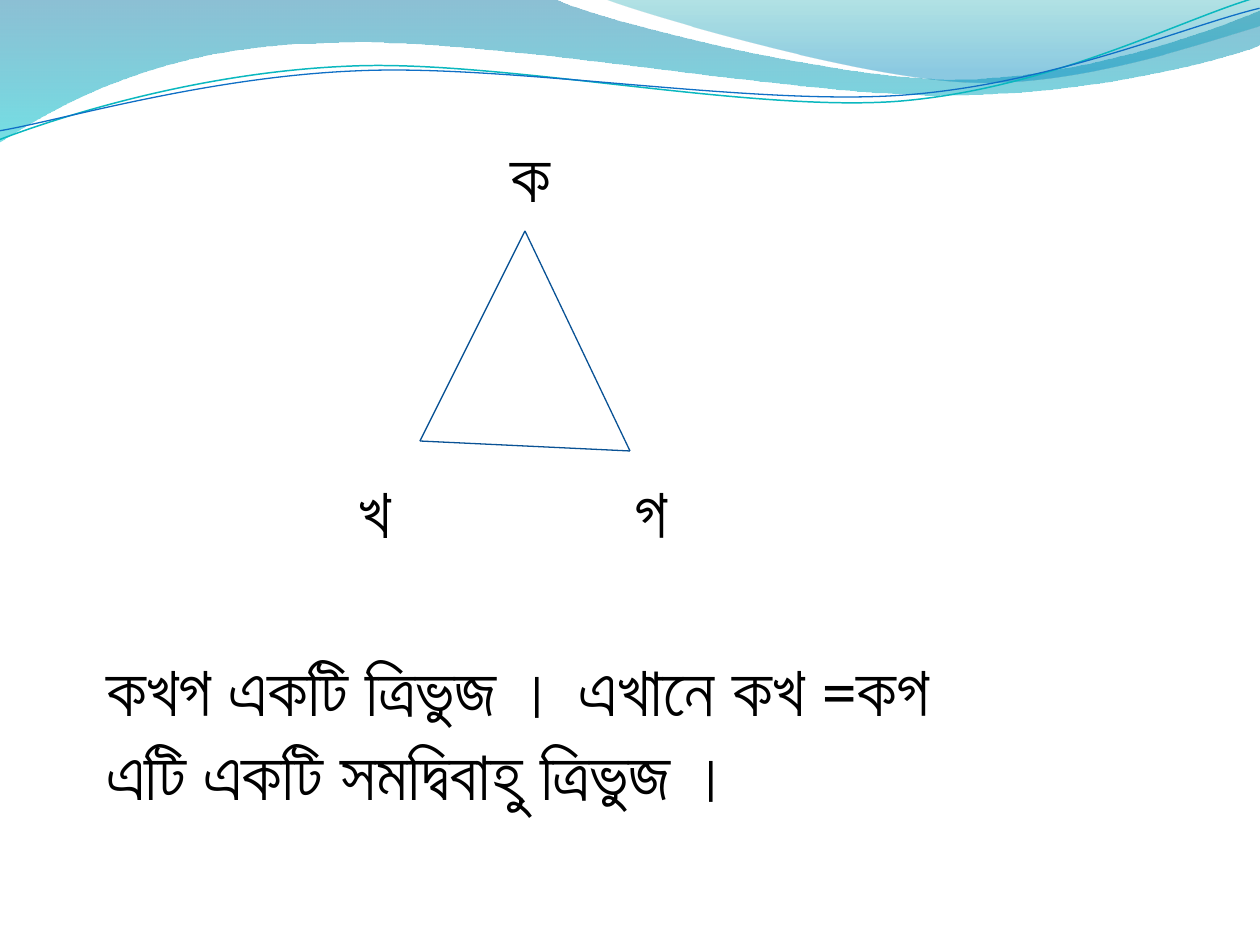
"""Build a slide showing an isosceles triangle below a waved header."""
import lxml.etree
import pptx
import pptx.dml.color
import pptx.enum.shapes
import pptx.enum.text
import pptx.oxml.ns
import pptx.util

PX = 914400 / 126
rgb = pptx.dml.color.RGBColor.from_string
qn = pptx.oxml.ns.qn
align = pptx.enum.text.PP_ALIGN

theme = {
    "band": [("0074A1", 45, 0), ("00C6CF", 55, 1)],
    "crest": [("00A1A9", 30, 0), ("008BBF", 45, 0.8)],
    "teal": ("0AB8BF", 0.85),
    "blue": ("0F6FC6", 0.75),
    "edge": ("095295", 0.75),
    "text": {"name": "Calibri", "size": pptx.util.Pt(40)},
    "ink": "000000",
}


def emu(*nums):
    return [round(num * PX) for num in nums]


def trace(shapes, start, parts, close):
    pen = shapes.build_freeform(*emu(*start))
    for part in parts:
        spots = [emu(*part[i:i + 2]) for i in range(0, len(part), 2)]
        pen.add_line_segments(spots, close=close and part is parts[-1])
    shape = pen.convert_to_shape()
    shape.shadow.inherit = False
    legs = iter(list(shape._element.iter(qn("a:lnTo"))))
    for part in parts:
        group = [next(legs) for _ in range(len(part) // 2)]
        if len(group) == 3:
            curve = lxml.etree.Element(qn("a:cubicBezTo"))
            group[0].addprevious(curve)
            for leg in group:
                curve.append(leg[0])
                leg.getparent().remove(leg)
    return shape


deck = pptx.Presentation()
deck.slide_width, deck.slide_height = emu(1260, 945)
slide = deck.slides.add_slide(deck.slide_layouts[6])
shapes = slide.shapes

bands = [
    ("band", (0, 0), [
        (554, -1), (600, 21, 837, 79, 955, 79), (1075, 79, 1207, 33, 1260, 11),
        (1261, 45), (1239, 55, 1096, 96, 940, 95), (784, 95, 481, 35, 324, 43),
        (163, 45, 58, 105, -1, 142), (0, 0)]),
    ("crest", (604, -1), [
        (641, 14, 859, 78, 969, 82), (1079, 87, 1211, 40, 1260, 26),
        (1260, 0), (604, -1)]),
]
for tone, start, parts in bands:
    band = trace(shapes, start, parts, True)
    band.line.fill.background()
    band.fill.gradient()
    band.fill.gradient_angle = 270
    for stop, (hue, alpha, place) in zip(band.fill.gradient_stops, theme[tone]):
        stop.color.rgb = rgb(hue)
        stop.position = place
    for node, (hue, alpha, place) in zip(band._element.iter(qn("a:srgbClr")), theme[tone]):
        lxml.etree.SubElement(node, qn("a:alpha"), val=str(alpha * 1000))

waves = [
    ("teal", (-3, 110), [
        (58, 90, 199, 52, 350, 53), (499, 53, 745, 118, 896, 114),
        (1049, 109, 1184, 45, 1260, 27)]),
    ("blue", (-2, 101), [
        (57, 94, 207, 57, 357, 58), (508, 58, 750, 112, 902, 108),
        (1052, 104, 1188, 52, 1262, 38)]),
]
for tone, start, parts in waves:
    wave = trace(shapes, start, parts, False)
    wave.rotation = 357.3
    wave.fill.background()
    hue, width = theme[tone]
    wave.line.color.rgb = rgb(hue)
    wave.line.width = pptx.util.Pt(width)

texts = [
    ((473, 126, 116, 97), align.CENTER, ["ক"]),
    ((346, 462, 105, 97), align.LEFT, ["খ"]),
    ((588, 462, 126, 97), align.CENTER, ["গ"]),
    ((94, 640, 1113, 267), align.LEFT,
     ["কখগ একটি ত্রিভুজ । এখানে কখ =কগ", "এটি একটি সমদ্বিবাহু ত্রিভুজ ।"]),
]
for place, side, lines in texts:
    frame = shapes.add_textbox(*emu(*place)).text_frame
    frame.word_wrap = True
    frame.auto_size = pptx.enum.text.MSO_AUTO_SIZE.SHAPE_TO_FIT_TEXT
    frame.text = "\n".join(lines)
    for para in frame.paragraphs:
        para.alignment = side
        font = para.runs[0].font
        for key, value in theme["text"].items():
            setattr(font, key, value)
        font.color.rgb = rgb(theme["ink"])

top, left, right = (525, 231), (420, 441), (630, 451)
hue, width = theme["edge"]
for start, end in [(top, left), (top, right), (left, right)]:
    edge = shapes.add_connector(pptx.enum.shapes.MSO_CONNECTOR.STRAIGHT, *emu(*start, *end))
    edge.line.color.rgb = rgb(hue)
    edge.line.width = pptx.util.Pt(width)
    lxml.etree.SubElement(edge._element.spPr, qn("a:effectLst"))

deck.save("out.pptx")
